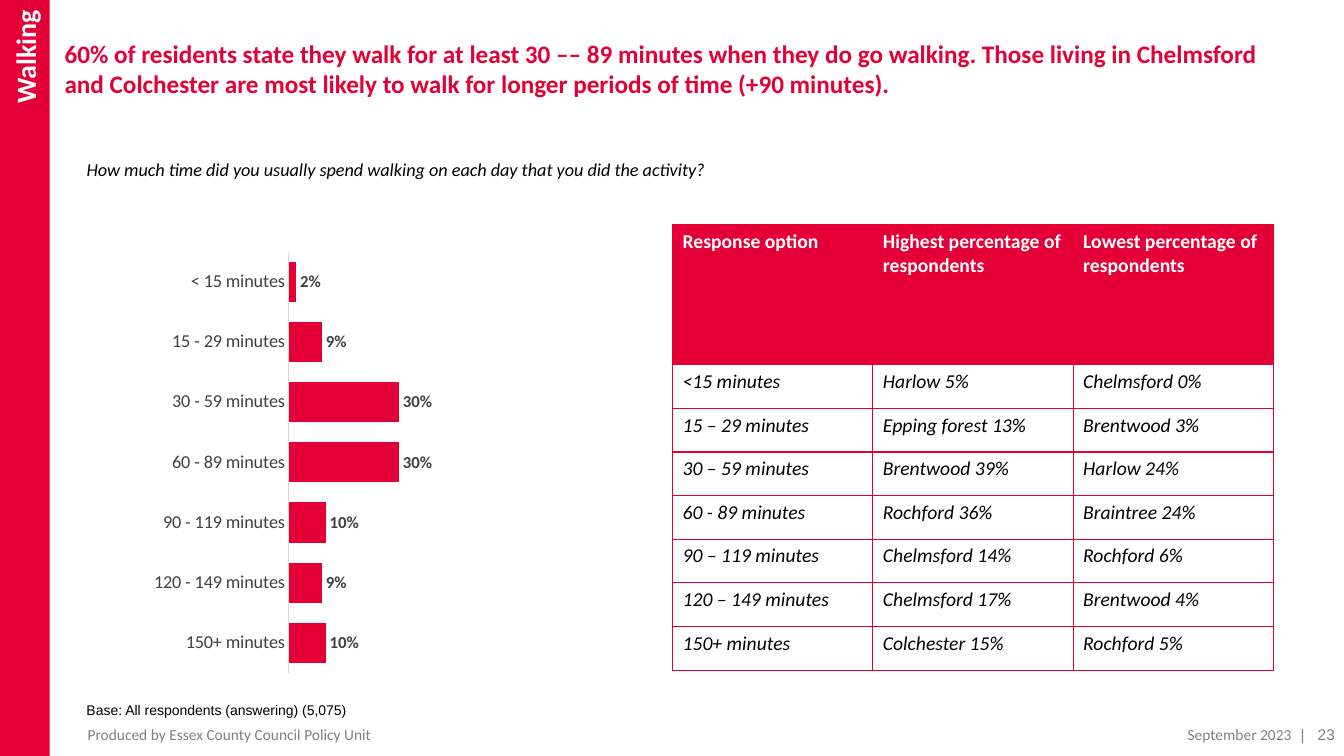
from dataclasses import dataclass

from lxml import etree
from pptx import Presentation, util as u
from pptx.chart.data import CategoryChartData
from pptx.dml.color import RGBColor
from pptx.enum import chart as ch, shapes, text
from pptx.oxml import parse_xml
from pptx.oxml.ns import nsdecls, qn


@dataclass
class Theme:
    red: str = "E40037"
    white: str = "FFFFFF"
    black: str = "000000"
    label: str = "404040"
    footer: str = "808080"
    axis: str = "D9D9D9"
    body: str = "Calibri"
    plain: str = "Arial"
    section_size: int = 20
    title_size: int = 18
    table_size: int = 14
    question_size: int = 13
    value_size: int = 12
    footer_size: int = 11
    base_size: int = 10


theme = Theme()
prs = Presentation()
prs.slide_width, prs.slide_height = u.Inches(13.33), u.Inches(7.5)
slide = prs.slides.add_slide(prs.slide_layouts[5])


def share(left, top, width, height):
    """Turn percentages of the slide into a position and a size."""
    sides = (prs.slide_width, prs.slide_height) * 2
    return [round(side * part / 100) for side, part in zip(sides, (left, top, width, height))]


def write(frame, words, size, color, face=theme.body, bold=False, italic=False, align=None):
    frame.text = words
    frame.word_wrap = True
    paragraph = frame.paragraphs[0]
    paragraph.alignment = align
    for run in paragraph.runs:
        run.font.size, run.font.name = u.Pt(size), face
        run.font.bold, run.font.italic = bold, italic
        run.font.color.rgb = RGBColor.from_string(color)
    return paragraph


# Section band
band = slide.shapes.add_shape(shapes.MSO_SHAPE.RECTANGLE, *share(0, 0, 3.7, 100))
band.shadow.inherit = False
band.fill.solid()
band.fill.fore_color.rgb = RGBColor.from_string(theme.red)
band.line.fill.background()
write(band.text_frame, "Walking", theme.section_size, theme.white, bold=True,
      align=text.PP_ALIGN.RIGHT)
band.text_frame.vertical_anchor = text.MSO_ANCHOR.MIDDLE
band.text_frame.margin_top = u.Inches(0.1)
band.text_frame._txBody.bodyPr.set("vert", "vert270")

# Headline
headline = slide.shapes.title
headline.left, headline.top, headline.width, headline.height = share(4.8, 5.07, 90.25, 15.47)
frame = headline.text_frame
write(frame, "60% of residents state they walk for at least 30 –– 89 minutes when they do go "
      "walking. Those living in Chelmsford and Colchester are most likely to walk for longer "
      "periods of time (+90 minutes).", theme.title_size, theme.red, bold=True,
      align=text.PP_ALIGN.LEFT)
frame.auto_size = text.MSO_AUTO_SIZE.NONE
frame.vertical_anchor = text.MSO_ANCHOR.TOP
frame.margin_left = frame.margin_top = frame.margin_right = frame.margin_bottom = 0

# Question and base
question = slide.shapes.add_textbox(*share(5.7, 20.27, 50, 4.27))
write(question.text_frame, "How much time did you usually spend walking on each day that you "
      "did the activity?", theme.question_size, theme.black, italic=True)
base = slide.shapes.add_textbox(*share(5.7, 92.13, 60.24, 3.6))
write(base.text_frame, "Base: All respondents (answering) (5,075)", theme.base_size,
      theme.black, theme.plain)

# Time spent walking chart
durations = CategoryChartData(number_format="0%")
durations.categories = ["< 15 minutes", "15 - 29 minutes", "30 - 59 minutes", "60 - 89 minutes",
                        "90 - 119 minutes", "120 - 149 minutes", "150+ minutes"]
durations.add_series("Series 1", [0.02, 0.09, 0.3, 0.3, 0.1, 0.09, 0.1])
walking = slide.shapes.add_chart(ch.XL_CHART_TYPE.BAR_CLUSTERED,
                                 *share(6.45, 30.4, 45.31, 58.93), durations).chart
walking.has_title = walking.has_legend = False
walking.font.name, walking.font.size = theme.body, u.Pt(theme.base_size)
walking.font.color.rgb = RGBColor.from_string(theme.black)

bars = walking.plots[0]
bars.gap_width = 50
bars.vary_by_categories = False
bars.series[0].format.fill.solid()
bars.series[0].format.fill.fore_color.rgb = RGBColor.from_string(theme.red)
bars.has_data_labels = True
labels = bars.data_labels
labels.show_value = True
labels.number_format, labels.number_format_is_linked = "0%", False
labels.position = ch.XL_LABEL_POSITION.OUTSIDE_END

times = walking.category_axis
times.reverse_order = True
times.major_tick_mark = times.minor_tick_mark = ch.XL_TICK_MARK.NONE
times.format.line.color.rgb = RGBColor.from_string(theme.axis)
times.format.line.width = u.Pt(0.75)
for font, size, bold in ((labels.font, theme.value_size, True),
                         (times.tick_labels.font, theme.question_size, False)):
    font.name, font.size, font.bold = theme.body, u.Pt(size), bold
    font.color.rgb = RGBColor.from_string(theme.label)

percent = walking.value_axis
percent.minimum_scale, percent.maximum_scale = 0, 1
percent.has_major_gridlines = False
percent.visible = False

# Fixed plot area inside the chart
plot_area = walking.element.find(".//" + qn("c:plotArea"))
for layout in plot_area.findall(qn("c:layout")):
    plot_area.remove(layout)
plot_area.insert(0, parse_xml(
    f'<c:layout {nsdecls("c")}><c:manualLayout><c:layoutTarget val="inner"/>'
    '<c:xMode val="edge"/><c:yMode val="edge"/><c:x val="0.332"/><c:y val="0.049"/>'
    '<c:w val="0.603"/><c:h val="0.946"/></c:manualLayout></c:layout>'))

# Highest and lowest districts table
districts = [
    ("Response option", "Highest percentage of respondents", "Lowest percentage of respondents"),
    ("<15 minutes", "Harlow 5%", "Chelmsford 0%"),
    ("15 – 29 minutes", "Epping forest 13%", "Brentwood 3%"),
    ("30 – 59 minutes", "Brentwood 39%", "Harlow 24%"),
    ("60 - 89 minutes", "Rochford 36%", "Braintree 24%"),
    ("90 – 119 minutes", "Chelmsford 14%", "Rochford 6%"),
    ("120 – 149 minutes", "Chelmsford 17%", "Brentwood 4%"),
    ("150+ minutes", "Colchester 15%", "Rochford 5%"),
]
ranking = slide.shapes.add_table(len(districts), 3, *share(50.04, 29.73, 44.71, 58.93)).table
ranking.first_row = ranking.horz_banding = False
for row, entries in enumerate(districts):
    heading = row == 0
    ranking.rows[row].height = share(0, 0, 0, 18.53 if heading else 5.77)[3]
    for column, entry in enumerate(entries):
        cell = ranking.cell(row, column)
        write(cell.text_frame, entry, theme.table_size,
              theme.white if heading else theme.black, bold=heading, italic=not heading)
        if heading:
            cell.fill.solid()
            cell.fill.fore_color.rgb = RGBColor.from_string(theme.red)
        else:
            cell.fill.background()
        for place, side in enumerate("LRTB"):
            cell._tc.get_or_add_tcPr().insert(place, parse_xml(
                f'<a:ln{side} {nsdecls("a")} w="{u.Pt(1)}"><a:solidFill>'
                f'<a:srgbClr val="{theme.red}"/></a:solidFill></a:ln{side}>'))

# Footer line
footer = [
    ("Produced by Essex County Council Policy Unit", 5.1, 49.06, theme.body, text.PP_ALIGN.LEFT),
    ("September 2023", 78.84, 18, theme.body, text.PP_ALIGN.RIGHT),
    ("|\t23", 93.62, 6.38, theme.plain, text.PP_ALIGN.LEFT),
]
for words, left, width, face, align in footer:
    note = slide.shapes.add_textbox(*share(left, 96.13, width, 2))
    line = write(note.text_frame, words, theme.footer_size, theme.footer, face, align=align)
    note.text_frame.vertical_anchor = text.MSO_ANCHOR.MIDDLE
    settings = line._p.get_or_add_pPr()
    if left < 50:
        settings.set("marL", str(u.Inches(0.09)))
    if "\t" in words:
        note.text_frame.margin_left = u.Inches(0.42)
        note.text_frame.margin_right = 0
        stops = etree.SubElement(settings, qn("a:tabLst"))
        etree.SubElement(stops, qn("a:tab"), pos=str(u.Inches(0.17)), algn="l")

prs.save("out.pptx")
